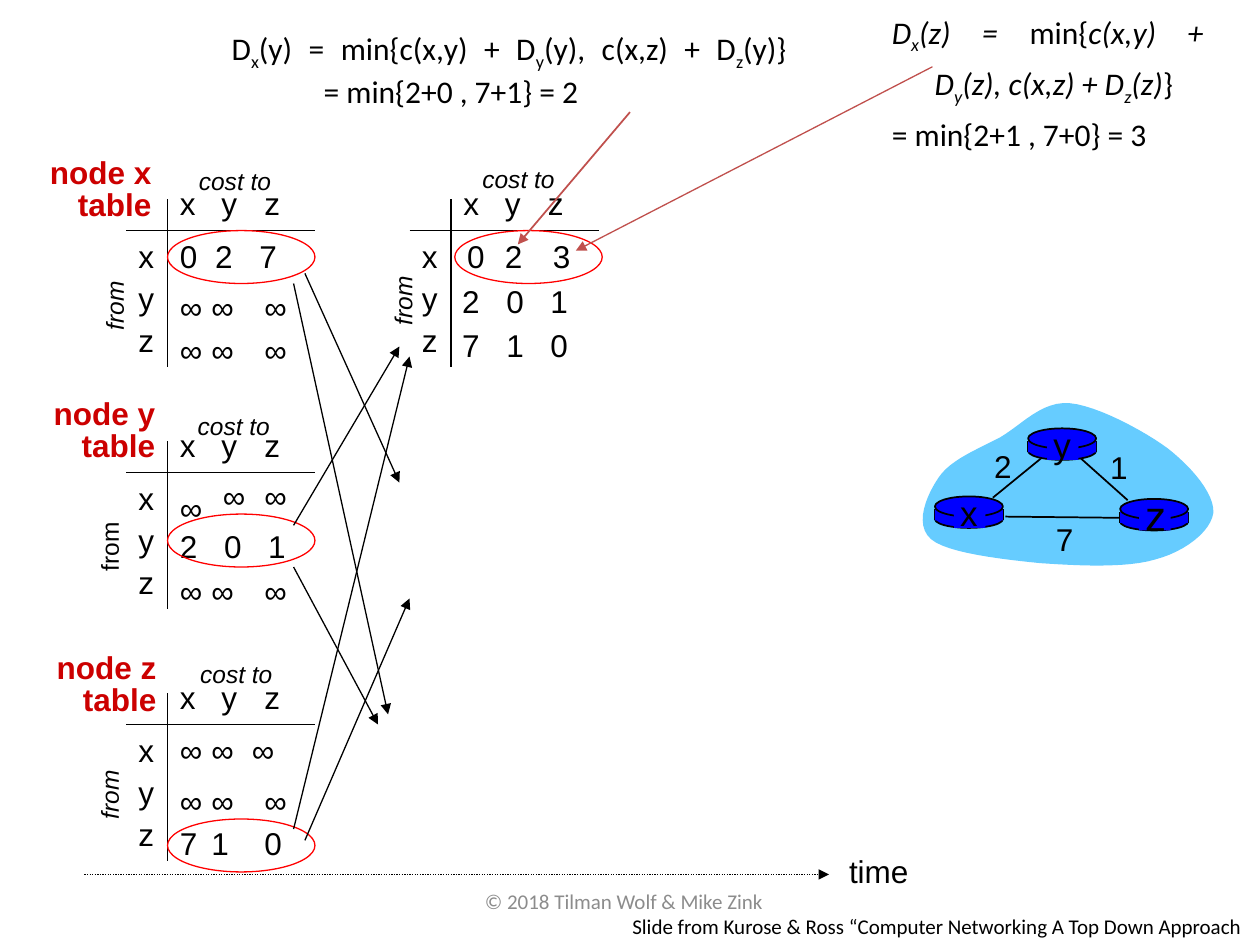
from lxml import etree
from pptx import Presentation
from pptx.dml.color import RGBColor
from pptx.enum import dml, shapes, text
from pptx.oxml.ns import qn
from pptx.util import Inches, Pt

BLACK, RED, LABEL_RED, ARROW_RED = "000000", "FF0000", "CC0000", "C0504D"
ROUTER_BLUE, CLOUD_BLUE, GREY = "0000FF", "66CCFF", "8C8C8C"
LEFT, CENTER = text.PP_ALIGN.LEFT, text.PP_ALIGN.CENTER
RIGHT, JUSTIFY = text.PP_ALIGN.RIGHT, text.PP_ALIGN.JUSTIFY


def color(hex_string):
    return RGBColor.from_string(hex_string)


def add_text(slide, box, lines, size=18, font="Arial", fill=BLACK, italic=False, bold=False,
             align=LEFT, spacing=None, wrap=False, rotation=0):
    """Add a text box with one paragraph for each line."""
    shape = slide.shapes.add_textbox(*map(Inches, box))
    shape.rotation = rotation
    frame = shape.text_frame
    frame.word_wrap = wrap
    for index, line in enumerate(lines):
        paragraph = frame.paragraphs[0] if index == 0 else frame.add_paragraph()
        paragraph.text = line
        paragraph.alignment = align
        paragraph.line_spacing = spacing
        paragraph.font.size, paragraph.font.name = Pt(size), font
        paragraph.font.italic, paragraph.font.bold = italic, bold
        paragraph.font.color.rgb = color(fill)
    return shape


def add_line(slide, start, end, line=BLACK, width=0.75, arrow=False, dotted=False):
    connector = slide.shapes.add_connector(shapes.MSO_CONNECTOR.STRAIGHT,
                                           *map(Inches, (*start, *end)))
    connector.line.color.rgb = color(line)
    connector.line.width = Pt(width)
    if dotted:
        connector.line.dash_style = dml.MSO_LINE.ROUND_DOT
    if arrow:
        etree.SubElement(connector.line._get_or_add_ln(), qn("a:tailEnd"), type="triangle")
    etree.SubElement(connector._element.spPr, qn("a:effectLst"))


def style_shape(shape, fill=None, line=None, width=1):
    shape.shadow.inherit = False
    if fill:
        shape.fill.solid()
        shape.fill.fore_color.rgb = color(fill)
    else:
        shape.fill.background()
    if line:
        shape.line.color.rgb = color(line)
        shape.line.width = Pt(width)
    else:
        shape.line.fill.background()


def add_preset(slide, kind, box, **style):
    style_shape(slide.shapes.add_shape(kind, *map(Inches, box)), **style)


def add_row(slide, left, top, values, stops):
    """Add a row of values, set apart by tab stops."""
    shape = add_text(slide, (left, top, 1.17, 0.4), ["\t".join(values)], wrap=True)
    properties = shape.text_frame.paragraphs[0]._p.get_or_add_pPr()
    tab_list = etree.Element(qn("a:tabLst"))
    for stop in stops:
        etree.SubElement(tab_list, qn("a:tab"), pos=str(Inches(stop)), algn="l")
    properties.find(qn("a:defRPr")).addprevious(tab_list)


def add_distance_table(slide, left, top, rows, ring, cost_at, from_at,
                       node=None, node_at=None, from_italic=True):
    """Add a distance vector table; all places are relative to left and top."""
    def box(place, width, height):
        return left + place[0], top + place[1], width, height

    add_line(slide, (left + 0.33, top), (left + 0.33, top + 1.33))
    add_line(slide, (left, top + 0.25), (left + 1.5, top + 0.25))
    add_row(slide, left + 0.33, top - 0.17, "xyz", (0.33, 0.67))
    for index, name in enumerate("xyz"):
        add_text(slide, (left, top + 0.25 + index / 3, 0.33, 0.4), [name])
    for row_left, row_top, values, stops in rows:
        add_row(slide, left + row_left, top + row_top, values, stops)
    add_text(slide, box(cost_at, 0.9, 0.33), ["cost to"], size=14, italic=True, wrap=True)
    add_text(slide, box(from_at, 0.59, 0.33), ["from"], size=14,
             italic=from_italic, rotation=270)
    add_preset(slide, shapes.MSO_SHAPE.OVAL, box(ring, 1.17, 0.42), line=RED, width=0.75)
    if node:
        add_text(slide, box(node_at, 1.01, 0.61), [f"node {node}", "table"], fill=LABEL_RED,
                 bold=True, align=RIGHT, spacing=0.85)


def add_router(slide, left, top, name, size):
    oval, rectangle = shapes.MSO_SHAPE.OVAL, shapes.MSO_SHAPE.RECTANGLE
    add_preset(slide, oval, (left, top + 0.11, 0.54, 0.14), fill=ROUTER_BLUE, line=BLACK)
    for side in (left, left + 0.54):
        add_line(slide, (side, top + 0.1), (side, top + 0.19), width=1)
    add_preset(slide, rectangle, (left, top + 0.1, 0.54, 0.09), fill=ROUTER_BLUE)
    add_preset(slide, oval, (left, top, 0.54, 0.16), fill=ROUTER_BLUE, line=BLACK)
    add_preset(slide, rectangle, (left + 0.15, top + 0.02, 0.25, 0.23), fill=ROUTER_BLUE)
    height = 0.43 if size == 20 else 0.5
    add_text(slide, (left + 0.1, top + 0.125 - height / 2, 0.34, height), [name],
             size=size, align=CENTER)


def add_cloud(slide, left, top):
    start = (0.2, 0.61)
    curves = [((0.29, 0.47), (0.52, 0.38), (0.69, 0.29)), ((0.86, 0.19), (1.02, 0), (1.24, 0.02)),
              ((1.46, 0.04), (1.83, 0.24), (2.02, 0.38)), ((2.21, 0.53), (2.39, 0.74), (2.38, 0.89)),
              ((2.36, 1.04), (2.15, 1.2), (1.92, 1.26)), ((1.69, 1.33), (1.3, 1.31), (1.01, 1.29)),
              ((0.71, 1.26), (0.27, 1.21), (0.14, 1.1)), ((0, 0.98), (0.11, 0.74), (0.2, 0.61))]
    points, steps = [start], 12
    for first, second, end in curves:
        begin = points[-1]
        for step in range(1, steps + 1):
            t = step / steps
            weights = ((1 - t) ** 3, 3 * t * (1 - t) ** 2, 3 * t * t * (1 - t), t ** 3)
            corners = (begin, first, second, end)
            points.append(tuple(sum(w * c[axis] for w, c in zip(weights, corners))
                                for axis in (0, 1)))
    outline = [(Inches(left + x), Inches(top + y)) for x, y in points]
    builder = slide.shapes.build_freeform(*outline[0])
    builder.add_line_segments(outline[1:], close=True)
    style_shape(builder.convert_to_shape(), fill=CLOUD_BLUE)


def add_network(slide, left, top):
    add_cloud(slide, left, top)
    for start, end in [((0.63, 0.77), (1.01, 0.46)), ((1.33, 0.46), (1.7, 0.79)),
                       ((1.66, 0.93), (0.73, 0.92))]:
        add_line(slide, (left + start[0], top + start[1]), (left + end[0], top + end[1]), width=1)
    for x, y, name, size in [(0.17, 0.76, "x", 20), (1.64, 0.78, "z", 24), (0.91, 0.22, "y", 20)]:
        add_router(slide, left + x, top + y, name, size)
    for x, y, cost in [(1.46, 0.33, "1"), (0.54, 0.32, "2"), (1.03, 0.9, "7")]:
        add_text(slide, (left + x, top + y, 0.34, 0.4), [cost], align=CENTER)


def add_equation(slide, box, lines, hanging, spacing=None):
    """Add lines of (markup, italic) parts: _ lowers the next letter, \v breaks the line."""
    shape = add_text(slide, box, [""] * len(lines), font="Calibri", align=JUSTIFY,
                     spacing=spacing, wrap=True)
    frame = shape.text_frame
    frame.vertical_anchor = text.MSO_ANCHOR.MIDDLE

    def add_run(paragraph, words, italic, lowered=False):
        run = paragraph.add_run()
        run.text = words
        run.font.italic = italic
        if lowered:
            run._r.get_or_add_rPr().set("baseline", "-25000")

    for paragraph, parts in zip(frame.paragraphs, lines):
        if any("\v" in markup for markup, _ in parts):
            properties = paragraph._p.get_or_add_pPr()
            properties.set("marL", str(Inches(hanging)))
            properties.set("indent", str(-Inches(hanging)))
        for markup, italic in parts:
            for line_index, line in enumerate(markup.split("\v")):
                if line_index:
                    paragraph.add_line_break()
                head, *lowered_parts = line.split("_")
                if head:
                    add_run(paragraph, head, italic)
                for part in lowered_parts:
                    add_run(paragraph, part[0], italic, lowered=True)
                    add_run(paragraph, part[1:], italic)


def add_tables(slide):
    wide, even = (0.25, 0.67), (0.35, 0.7)
    add_distance_table(slide, 1, 1.58, [(0.33, 0.25, "027", (0.28, 0.63)),
                                        (0.33, 0.66, "∞∞∞", wide), (0.33, 1, "∞∞∞", wide)],
                       (0.33, 0.25), (0.48, -0.31), (-0.39, 0.68), "x", (-0.71, -0.37))
    add_distance_table(slide, 3.25, 1.58, [(0.36, 0.25, "023", (0.3, 0.68)),
                                           (0.32, 0.61, "201", even), (0.32, 0.96, "710", even)],
                       (0.36, 0.25), (0.48, -0.33), (-0.35, 0.64))
    add_distance_table(slide, 1, 3.5, [(0.33, 0.33, "∞", ()), (0.67, 0.24, "∞∞", (0.33,)),
                                       (0.33, 0.63, "201", even), (0.33, 0.99, "∞∞∞", wide)],
                       (0.33, 0.58), (0.47, -0.29), (-0.43, 0.67), "y", (-0.68, -0.38), False)
    add_distance_table(slide, 1, 5.5, [(0.33, 0.25, "∞∞∞", (0.25, 0.57)),
                                       (0.33, 0.66, "∞∞∞", wide), (0.33, 0.99, "710", wide)],
                       (0.33, 1), (0.49, -0.32), (-0.43, 0.64), "z", (-0.67, -0.36))


def add_exchange_arrows(slide):
    for start, end in [((2.42, 2.17), (3.17, 3.83)), ((2.33, 2.25), (3.08, 5.67)),
                       ((2.33, 4.17), (3.17, 2.75)), ((2.33, 4.5), (3, 5.75)),
                       ((2.33, 6.58), (3.25, 2.83)), ((2.42, 6.67), (3.25, 4.75))]:
        add_line(slide, start, end, arrow=True)


def add_equations(slide):
    add_equation(slide, (1.74, 0.2, 4.6, 0.7),
                 [[("D_x(y) = min{c(x,y) + D_y(y), c(x,z) + D_z(y)}\v= min{2+0 , 7+1} = 2", False)]],
                 0.73)
    add_equation(slide, (6.98, 0.03, 2.67, 1.18),
                 [[("D_x(z) = ", True), ("min{", False),
                   ("c(x,y) +\vD_y(z), c(x,z) + D_z(z)", True), ("}", False)],
                  [("= min{2+1 , 7+0} = 3", False)]], 0.34, spacing=1.2)
    add_line(slide, (5, 0.89), (4.11, 1.94), line=ARROW_RED, width=1, arrow=True)
    add_line(slide, (7.4, 0.53), (4.57, 1.99), line=ARROW_RED, arrow=True)


def add_footer(slide):
    add_line(slide, (0.67, 6.94), (6.58, 6.94), arrow=True, dotted=True)
    add_text(slide, (6.64, 6.71, 0.67, 0.4), ["time"])
    add_text(slide, (3.75, 7, 2.44, 0.3), ["© 2018 Tilman Wolf & Mike Zink"],
             size=12, font="Calibri", fill=GREY)
    add_text(slide, (4.92, 7.2, 5.12, 0.3),
             ["Slide from Kurose & Ross “Computer Networking A Top Down Approach"],
             size=12, font="Calibri")


def main():
    presentation = Presentation()
    presentation.slide_width, presentation.slide_height = Inches(10), Inches(7.5)
    slide = presentation.slides.add_slide(presentation.slide_layouts[6])
    add_tables(slide)
    add_exchange_arrows(slide)
    add_network(slide, 7.25, 3.18)
    add_equations(slide)
    add_footer(slide)
    presentation.save("out.pptx")


if __name__ == "__main__":
    main()
